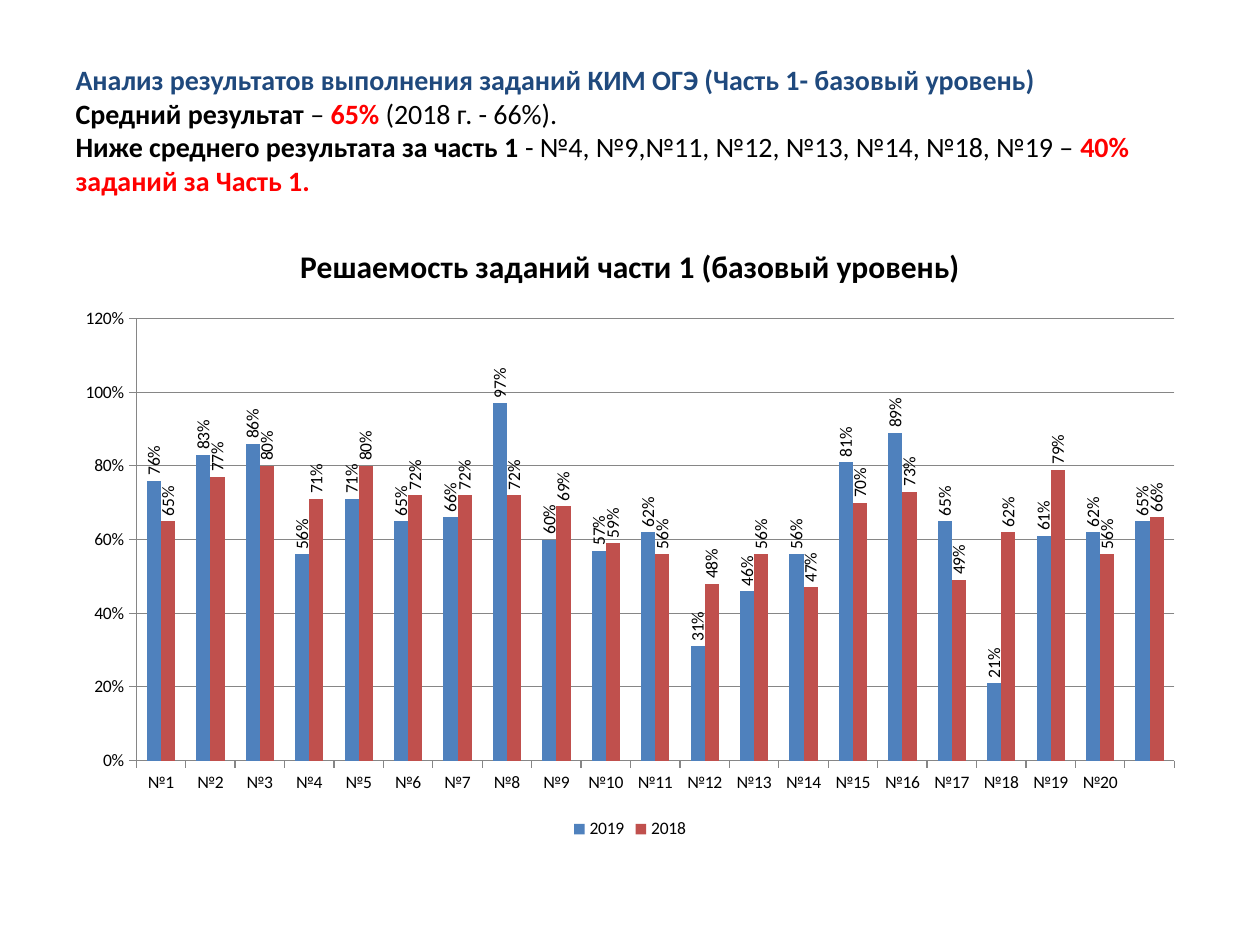
from pptx import Presentation
from pptx import util as u
from pptx.chart.data import CategoryChartData
from pptx.dml.color import RGBColor
from pptx.enum import chart as ch, text

PX_PER_INCH = 126
FONT = "Calibri"
NAVY = RGBColor(0x1F, 0x49, 0x7D)
BLACK = RGBColor(0, 0, 0)
RED = RGBColor(0xFF, 0, 0)
BLUE = RGBColor(0x4F, 0x81, 0xBD)
BRICK = RGBColor(0xC0, 0x50, 0x4D)
GREY = RGBColor(0x86, 0x86, 0x86)

# Each line holds (text, colour, bold) pieces.
HEADING = [
    [("Анализ результатов выполнения заданий КИМ ОГЭ (Часть 1- базовый уровень)", NAVY, True)],
    [("Средний результат ", BLACK, True), ("– ", BLACK, False),
     ("65%", RED, True), (" (2018 г. - 66%).", BLACK, False)],
    [("Ниже среднего результата за часть 1 ", BLACK, True),
     ("- №4, №9,№11, №12, №13, №14, №18, №19 – ", BLACK, False),
     ("40% заданий за Часть 1.", RED, True)],
]

CHART_TITLE = "Решаемость заданий части 1 (базовый уровень)"
# The last, unnamed group is the average over all tasks.
TASKS = [f"№{n}" for n in range(1, 21)] + [""]
PERCENT_SOLVED = {
    "2019": (BLUE, [76, 83, 86, 56, 71, 65, 66, 97, 60, 57, 62,
                    31, 46, 56, 81, 89, 65, 21, 61, 62, 65]),
    "2018": (BRICK, [65, 77, 80, 71, 80, 72, 72, 72, 69, 59, 56,
                     48, 56, 47, 70, 73, 49, 62, 79, 56, 66]),
}


def px(length):
    return u.Emu(round(length * 914400 / PX_PER_INCH))


def style_font(font, size, colour=BLACK, bold=False):
    font.name = FONT
    font.size = u.Pt(size)
    font.bold = bold
    font.color.rgb = colour


def fill_heading(heading):
    heading.left, heading.top, heading.width, heading.height = map(px, (63, 66, 1134, 128))
    frame = heading.text_frame
    frame.word_wrap = True
    frame.auto_size = text.MSO_AUTO_SIZE.NONE
    frame.vertical_anchor = text.MSO_ANCHOR.MIDDLE
    paragraph = frame.paragraphs[0]
    paragraph.alignment = text.PP_ALIGN.LEFT
    for number, line in enumerate(HEADING):
        if number:
            paragraph.add_line_break()
        for wording, colour, bold in line:
            run = paragraph.add_run()
            run.text = wording
            style_font(run.font, 16, colour, bold)


def style_axis(axis):
    axis.major_tick_mark = ch.XL_TICK_MARK.OUTSIDE
    axis.format.line.color.rgb = GREY
    style_font(axis.tick_labels.font, 10)


def style_series(series, colour):
    series.format.fill.solid()
    series.format.fill.fore_color.rgb = colour
    series.invert_if_negative = False
    labels = series.data_labels
    labels.show_value = True
    labels.position = ch.XL_LABEL_POSITION.OUTSIDE_END
    labels.number_format = "0%"
    labels.number_format_is_linked = False
    style_font(labels.font, 10)
    # Turn the labels to read upwards.
    body = labels._element.xpath("c:txPr/a:bodyPr")[0]
    body.set("rot", "-5400000")
    body.set("vert", "horz")


def add_results_chart(slide):
    data = CategoryChartData(number_format="0%")
    data.categories = TASKS
    for year, (_, percents) in PERCENT_SOLVED.items():
        data.add_series(year, [percent / 100 for percent in percents])
    chart = slide.shapes.add_chart(
        ch.XL_CHART_TYPE.COLUMN_CLUSTERED, *map(px, (63, 220, 1134, 624)), data).chart
    style_font(chart.font, 10)

    chart.has_title = True
    title_frame = chart.chart_title.text_frame
    title_frame.text = CHART_TITLE
    style_font(title_frame.paragraphs[0].runs[0].font, 18, bold=True)
    chart.chart_title.include_in_layout = False

    chart.has_legend = True
    chart.legend.position = ch.XL_LEGEND_POSITION.BOTTOM
    chart.legend.include_in_layout = False
    style_font(chart.legend.font, 10)

    style_axis(chart.category_axis)
    scale = chart.value_axis
    style_axis(scale)
    scale.minimum_scale, scale.maximum_scale, scale.major_unit = 0, 1.2, 0.2
    scale.tick_labels.number_format = "0%"
    scale.tick_labels.number_format_is_linked = False
    scale.has_major_gridlines = True
    scale.major_gridlines.format.line.color.rgb = GREY

    plot = chart.plots[0]
    plot.gap_width = 150
    plot.overlap = 0
    plot.vary_by_categories = False
    for series in plot.series:
        style_series(series, PERCENT_SOLVED[series.name][0])


def main():
    deck = Presentation()
    deck.slide_width, deck.slide_height = px(1260), px(945)
    slide = deck.slides.add_slide(deck.slide_layouts.get_by_name("Title Only"))
    fill_heading(slide.shapes.title)
    add_results_chart(slide)
    deck.save("out.pptx")


if __name__ == "__main__":
    main()
